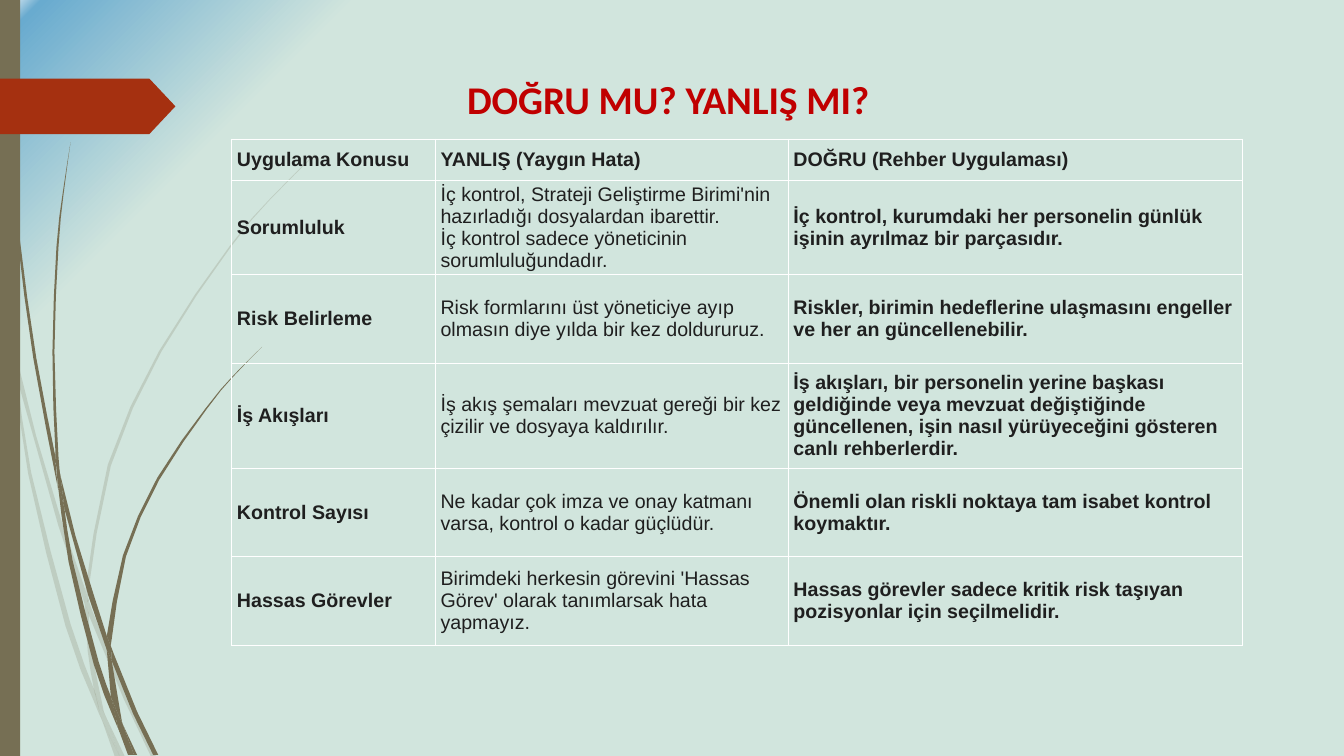
from lxml.etree import SubElement
from pptx import Presentation
from pptx.dml.color import RGBColor
from pptx.enum.shapes import MSO_SHAPE
from pptx.enum.text import MSO_ANCHOR, MSO_AUTO_SIZE, PP_ALIGN
from pptx.oxml.ns import qn
from pptx.util import Inches, Pt

OLIVE = RGBColor(0x76, 0x6F, 0x54)
RUST = RGBColor(0xA5, 0x30, 0x10)
RED = RGBColor(0xC0, 0x00, 0x00)
INK = RGBColor(0x1F, 0x1F, 0x1F)
WHITE = RGBColor(0xFF, 0xFF, 0xFF)
MINT = RGBColor(0xD1, 0xE5, 0xDD)
SKY = RGBColor(0x69, 0xAB, 0xCF)

BACKDROP_STOPS = [(0, MINT), (83, MINT), (98, SKY), (100, WHITE)]

# Each piece of grass has a left and a right edge, both from top to bottom.
PALE_GRASS = [
    ([(0, 2.82), (0, 2.99), (.1, 3.44), (.11, 3.5)], [(.09, 3.22), (.11, 3.5)]),
    ([(.14, 3.45), (.17, 3.76), (.58, 5.22), (.84, 5.99)],
     [(.14, 3.45), (.36, 4.33), (.62, 5.2), (.85, 5.86)]),
    ([(.88, 5.96), (.88, 6.1), (1.23, 6.94), (1.5, 7.51)],
     [(.88, 5.96), (.92, 6.07), (1.27, 6.92), (1.55, 7.51)]),
    ([(1.05, 7.11), (1.19, 7.51)], [(1.05, 7.11), (1.24, 7.51)]),
    ([(.11, 3.5), (.28, 4.7), (.65, 6.21), (.92, 6.93), (1.01, 7.14)],
     [(.11, 3.5), (.17, 3.76), (.31, 4.69), (.7, 6.19), (.93, 6.83), (.99, 7.07)]),
    ([(.84, 5.99), (.87, 6.46), (.93, 6.83), (.96, 6.92), (1.05, 7.11)],
     [(.84, 5.99), (.88, 6.08), (.88, 6.1), (.91, 6.46), (1.03, 7.06)]),
    ([(3.12, 1.53), (2.68, 1.97), (2.28, 2.44), (1.58, 3.48), (1.07, 4.61), (.85, 5.84)],
     [(3.12, 1.54), (2.68, 1.98), (2.29, 2.45), (1.6, 3.49), (1.1, 4.62), (.88, 5.84), (.88, 5.96)]),
    ([(1.01, 7.14), (1.14, 7.51)], [(1.01, 7.14), (1.19, 7.51)]),
    ([(.85, 5.86), (.84, 5.99), (.88, 6.08)], [(.85, 5.86), (.88, 5.96), (.88, 6.1)]),
    ([(.93, 6.83), (.99, 7.07), (1.01, 7.14), (1.19, 7.51)],
     [(.93, 6.83), (.96, 6.92), (1.05, 7.11), (1.19, 7.51)]),
]
DARK_GRASS = [
    ([(.03, 0), (.04, .48), (.07, 1.1), (.17, 2.33), (.33, 3.55), (.56, 4.77), (.57, 4.81)],
     [(.04, 0), (.05, .48), (.08, 1.09), (.19, 2.32), (.36, 3.55), (.55, 4.53), (.55, 4.57)]),
    ([(.6, 4.72), (.64, 5.05), (.88, 5.92), (1.06, 6.45)],
     [(.6, 4.72), (.75, 5.32), (.93, 5.9), (1.06, 6.31)]),
    ([(1.1, 6.41), (1.11, 6.56), (1.32, 7.08), (1.52, 7.49)],
     [(1.1, 6.41), (1.13, 6.49), (1.36, 7.06), (1.57, 7.49)]),
    ([(.57, 4.77), (.68, 5.57), (.93, 6.59), (1.11, 7.08), (1.17, 7.22)],
     [(.57, 4.77), (.64, 5.05), (.72, 5.56), (.98, 6.57), (1.1, 6.91), (1.16, 7.17)]),
    ([(.7, 1.41), (.62, 1.93), (.56, 2.45), (.52, 3.49), (.55, 4.49), (.6, 4.72)],
     [(.7, 1.41), (.63, 1.93), (.58, 2.45), (.54, 3.49), (.58, 4.53), (.6, 4.72)]),
    ([(1.22, 7.19), (1.33, 7.49)], [(1.22, 7.19), (1.36, 7.49)]),
    ([(.55, 4.49), (.55, 4.53), (.57, 4.77), (.64, 5.05)], [(.55, 4.49), (.6, 4.72), (.64, 5.05)]),
    ([(2.6, 3.44), (2.31, 3.73), (2.04, 4.05), (1.56, 4.74), (1.22, 5.51), (1.06, 6.31)],
     [(2.6, 3.44), (2.31, 3.74), (2.05, 4.06), (1.58, 4.76), (1.25, 5.52), (1.11, 6.33), (1.1, 6.41)]),
    ([(1.17, 7.22), (1.27, 7.49)], [(1.17, 7.22), (1.31, 7.49)]),
    ([(1.06, 6.45), (1.1, 6.91), (1.16, 7.06), (1.22, 7.19)],
     [(1.06, 6.45), (1.09, 6.51), (1.11, 6.56), (1.21, 7.16)]),
    ([(1.06, 6.31), (1.06, 6.45), (1.09, 6.51)], [(1.06, 6.31), (1.1, 6.41), (1.11, 6.56)]),
    ([(1.1, 6.91), (1.16, 7.17), (1.17, 7.22), (1.3, 7.49)],
     [(1.1, 6.91), (1.16, 7.06), (1.22, 7.19), (1.33, 7.49)]),
]

COLUMN_WIDTHS = [2.02, 3.5, 4.5]
ROW_HEIGHTS = [.41, .72, .88, 1.04, .88, .88]
PRACTICES = [
    ("Uygulama Konusu", "YANLIŞ (Yaygın Hata)", "DOĞRU (Rehber Uygulaması)"),
    ("Sorumluluk",
     "İç kontrol, Strateji Geliştirme Birimi'nin hazırladığı dosyalardan ibarettir.\n"
     "İç kontrol sadece yöneticinin sorumluluğundadır.",
     "İç kontrol, kurumdaki her personelin günlük işinin ayrılmaz bir parçasıdır."),
    ("Risk Belirleme",
     "Risk formlarını üst yöneticiye ayıp olmasın diye yılda bir kez doldururuz.",
     "Riskler, birimin hedeflerine ulaşmasını engeller ve her an güncellenebilir."),
    ("İş Akışları",
     "İş akış şemaları mevzuat gereği bir kez çizilir ve dosyaya kaldırılır.",
     "İş akışları, bir personelin yerine başkası geldiğinde veya mevzuat değiştiğinde "
     "güncellenen, işin nasıl yürüyeceğini gösteren canlı rehberlerdir."),
    ("Kontrol Sayısı",
     "Ne kadar çok imza ve onay katmanı varsa, kontrol o kadar güçlüdür.",
     "Önemli olan riskli noktaya tam isabet kontrol koymaktır."),
    ("Hassas Görevler",
     "Birimdeki herkesin görevini 'Hassas Görev' olarak tanımlarsak hata yapmayız.",
     "Hassas görevler sadece kritik risk taşıyan pozisyonlar için seçilmelidir."),
]


def paint_backdrop(slide):
    """Radial gradient that spreads from the bottom right corner."""
    slide.background.fill.gradient()
    gradient = slide.element.find(".//" + qn("a:gradFill"))
    for child in list(gradient):
        gradient.remove(child)
    stops = SubElement(gradient, qn("a:gsLst"))
    for percent, color in BACKDROP_STOPS:
        stop = SubElement(stops, qn("a:gs"), pos=str(percent * 1000))
        SubElement(stop, qn("a:srgbClr"), val=str(color))
    circle = SubElement(gradient, qn("a:path"), path="circle")
    SubElement(circle, qn("a:fillToRect"), l="100000", t="100000")


def paint(shape, color):
    shape.shadow.inherit = False
    shape.fill.solid()
    shape.fill.fore_color.rgb = color
    shape.line.fill.background()


def smooth(edge):
    """Long edges get a Catmull-Rom point halfway between each two knots."""
    if len(edge) < 5:
        return edge
    ends = [edge[0], *edge, edge[-1]]
    points = []
    for a, b, c, d in zip(ends, ends[1:], ends[2:], ends[3:]):
        points += [b, [(9 * (q + r) - p - s) / 16 for p, q, r, s in zip(a, b, c, d)]]
    return points + [edge[-1]]


def add_grass(slide, left, right, opacity):
    outline = [(Inches(x), Inches(y)) for x, y in smooth(left) + smooth(right)[::-1]]
    builder = slide.shapes.build_freeform(*outline[0])
    builder.add_line_segments(outline[1:])
    piece = builder.convert_to_shape()
    paint(piece, OLIVE)
    if opacity < 100:
        color = piece.element.spPr.find(qn("a:solidFill"))[0]
        SubElement(color, qn("a:alpha"), val=str(opacity * 1000))


def add_block(slide, preset, left, top, width, height, color):
    block = slide.shapes.add_shape(preset, Inches(left), Inches(top), Inches(width), Inches(height))
    paint(block, color)
    return block


def add_text(paragraph, text, font, size, color, bold):
    run = paragraph.add_run()
    run.text = text
    run.font.name, run.font.size, run.font.bold = font, Pt(size), bold
    run.font.color.rgb = color


def set_title(slide, text):
    title = slide.shapes.title
    title.left, title.top = Inches(1.67), Inches(.7)
    title.width, title.height = Inches(10), Inches(.68)
    frame = title.text_frame
    frame.word_wrap = True
    frame.auto_size = MSO_AUTO_SIZE.NONE
    frame.vertical_anchor = MSO_ANCHOR.TOP
    frame.paragraphs[0].alignment = PP_ALIGN.CENTER
    add_text(frame.paragraphs[0], text, "Calibri", 28, RED, True)


def outline_cell(cell):
    properties = cell._tc.get_or_add_tcPr()
    for position, side in enumerate(("lnL", "lnR", "lnT", "lnB")):
        border = SubElement(properties, qn("a:" + side), w=str(Pt(.75)))
        properties.insert(position, border)
        fill = SubElement(border, qn("a:solidFill"))
        SubElement(fill, qn("a:srgbClr"), val=str(WHITE))


def fill_cell(cell, text, bold):
    cell.fill.background()
    outline_cell(cell)
    cell.vertical_anchor = MSO_ANCHOR.MIDDLE
    cell.margin_left = cell.margin_right = Inches(.05)
    cell.margin_top = cell.margin_bottom = Inches(.03)
    frame = cell.text_frame
    for index, line in enumerate(text.split("\n")):
        paragraph = frame.add_paragraph() if index else frame.paragraphs[0]
        add_text(paragraph, line, "Arial", 14, INK, bold)


def add_practice_table(slide):
    table = slide.shapes.add_table(
        len(ROW_HEIGHTS), len(COLUMN_WIDTHS), Inches(2.3), Inches(1.38),
        Inches(sum(COLUMN_WIDTHS)), Inches(sum(ROW_HEIGHTS))).table
    table.first_row = table.horz_banding = False
    for column, width in zip(table.columns, COLUMN_WIDTHS):
        column.width = Inches(width)
    for r, (height, texts) in enumerate(zip(ROW_HEIGHTS, PRACTICES)):
        table.rows[r].height = Inches(height)
        for c, text in enumerate(texts):
            fill_cell(table.cell(r, c), text, bold=r == 0 or c != 1)


def main():
    deck = Presentation()
    deck.slide_width, deck.slide_height = Inches(13.33), Inches(7.5)
    slide = deck.slides.add_slide(deck.slide_layouts[5])
    paint_backdrop(slide)
    for pieces, opacity in ((PALE_GRASS, 20), (DARK_GRASS, 100)):
        for left, right in pieces:
            add_grass(slide, left, right, opacity)
    add_block(slide, MSO_SHAPE.RECTANGLE, 0, 0, .2, 7.5, OLIVE)
    arrow = add_block(slide, MSO_SHAPE.PENTAGON, 0, .78, 1.74, .55, RUST)
    arrow.adjustments[0] = .47
    set_title(slide, "DOĞRU MU? YANLIŞ MI? ")
    add_practice_table(slide)
    deck.save("out.pptx")


if __name__ == "__main__":
    main()
